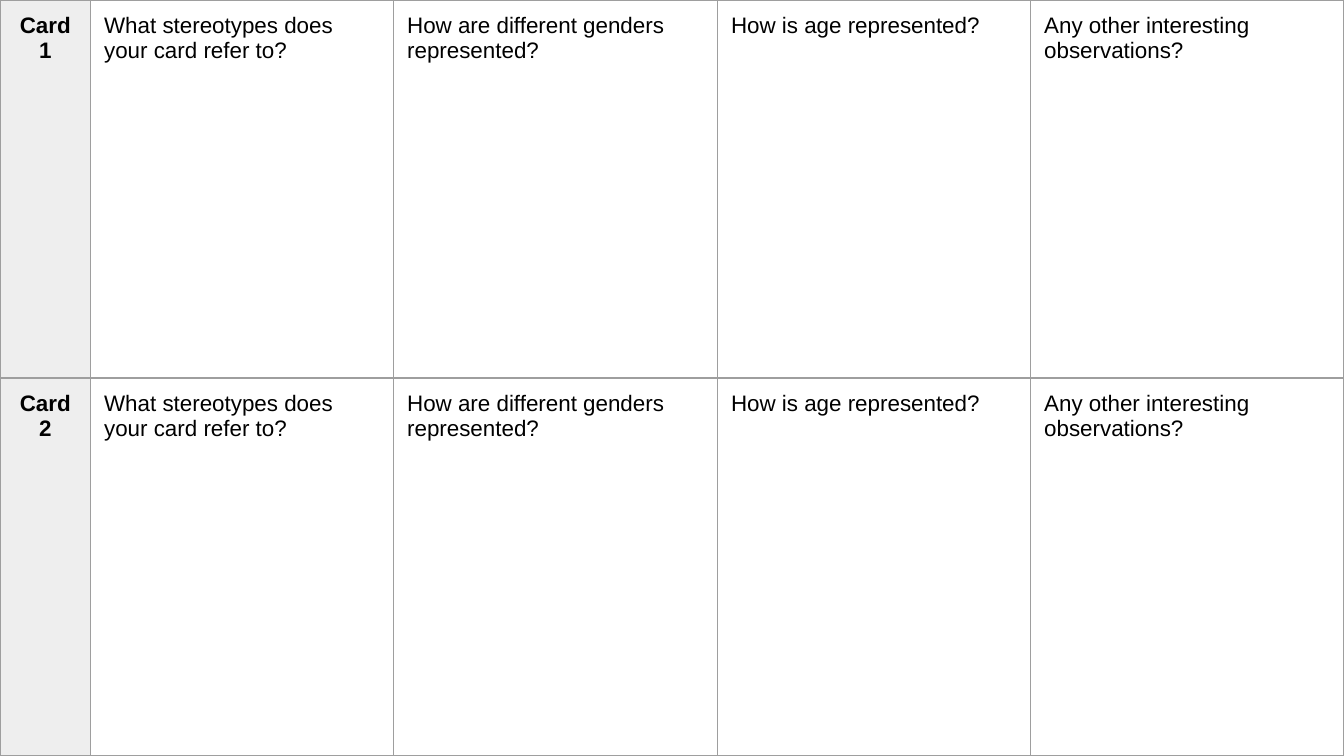
from lxml.etree import SubElement
from pptx import Presentation
from pptx.dml.color import RGBColor
from pptx.enum.text import MSO_ANCHOR, PP_ALIGN
from pptx.oxml.ns import qn
from pptx.util import Inches, Pt

COLORS = {"text": "000000", "border": "9E9E9E", "label": "EEEEEE"}
QUESTIONS = [
    "What stereotypes does your card refer to?",
    "How are different genders represented?",
    "How is age represented?",
    "Any other interesting observations?",
]
CARDS = ["Card 1", "Card 2"]
COLUMN_PERCENTS = [6.75, 22.55, 24.1, 23.3, 23.3]


def write_text(frame, text, *, font="Arial", size=12, color="text", bold=False,
               align=PP_ALIGN.LEFT):
    paragraph = frame.paragraphs[0]
    paragraph.alignment = align
    run = paragraph.add_run()
    run.text = text
    run.font.name = font
    run.font.size = Pt(size)
    run.font.bold = bold
    run.font.color.rgb = RGBColor.from_string(COLORS[color])


class WorksheetSlide:
    """Hold the worksheet style and the slide it is applied to."""

    margin = Inches(0.1)
    border_width = Pt(0.75)

    def __init__(self, presentation):
        self.width = presentation.slide_width
        self.height = presentation.slide_height
        self.slide = presentation.slides.add_slide(presentation.slide_layouts[6])

    def add_table(self, rows, column_percents):
        shape = self.slide.shapes.add_table(
            len(rows), len(column_percents), 0, 0, self.width, self.height)
        table = shape.table
        table.first_row = table.horz_banding = False
        for column, percent in zip(table.columns, column_percents):
            column.width = round(self.width * percent / 100)
        for row_index, texts in enumerate(rows):
            table.rows[row_index].height = self.height // len(rows)
            for column_index, text in enumerate(texts):
                self.style_cell(table.cell(row_index, column_index), text,
                                is_label=column_index == 0)

    def style_cell(self, cell, text, is_label):
        cell.margin_left = cell.margin_right = self.margin
        cell.margin_top = cell.margin_bottom = self.margin
        cell.vertical_anchor = MSO_ANCHOR.TOP
        self.add_borders(cell)
        if is_label:
            cell.fill.solid()
            cell.fill.fore_color.rgb = RGBColor.from_string(COLORS["label"])
        else:
            cell.fill.background()
        write_text(cell.text_frame, text, bold=is_label,
                   align=PP_ALIGN.CENTER if is_label else PP_ALIGN.LEFT)

    def add_borders(self, cell):
        properties = cell._tc.get_or_add_tcPr()
        for side in ("lnL", "lnR", "lnT", "lnB"):
            line = SubElement(properties, qn(f"a:{side}"), w=str(self.border_width))
            fill = SubElement(line, qn("a:solidFill"))
            SubElement(fill, qn("a:srgbClr"), val=COLORS["border"])


def main():
    presentation = Presentation()
    presentation.slide_width = Inches(10)
    presentation.slide_height = presentation.slide_width * 9 // 16
    worksheet = WorksheetSlide(presentation)
    worksheet.add_table([[card, *QUESTIONS] for card in CARDS], COLUMN_PERCENTS)
    presentation.save("out.pptx")


if __name__ == "__main__":
    main()
